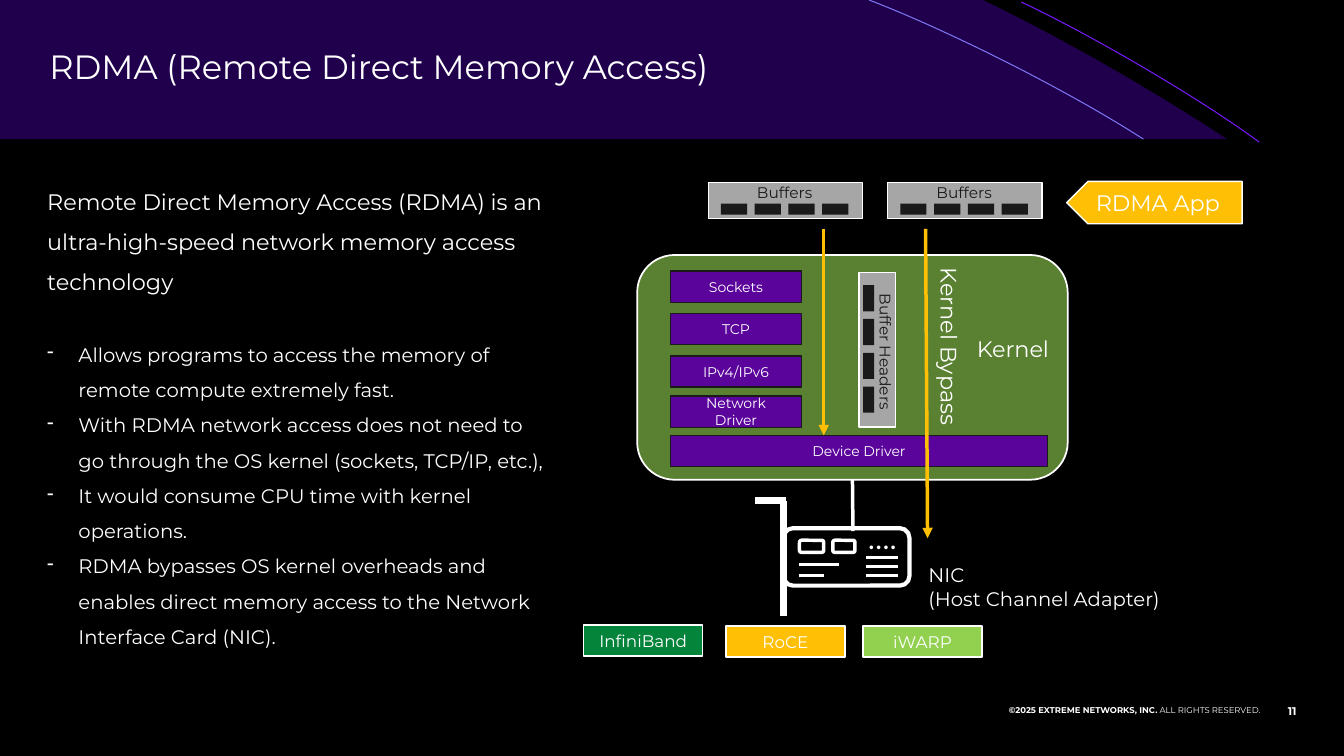
from lxml import etree
from pptx import Presentation
from pptx.dml.color import RGBColor
from pptx.enum import shapes, text
from pptx.oxml.ns import qn
from pptx.util import Inches, Pt

FONT = "Montserrat"
BLACK = RGBColor(0x00, 0x00, 0x00)
WHITE = RGBColor(0xFF, 0xFF, 0xFF)
INK = RGBColor(0x1A, 0x1A, 0x1A)
GREY = RGBColor(0xA6, 0xA6, 0xA6)
NAVY = RGBColor(0x20, 0x00, 0x4C)
VIOLET = RGBColor(0x75, 0x19, 0xF9)
PERIWINKLE = RGBColor(0x7D, 0x76, 0xF2)
PURPLE = RGBColor(0x5B, 0x04, 0x9C)
GREEN = RGBColor(0x04, 0x83, 0x3B)
LIME = RGBColor(0x92, 0xD0, 0x50)
AMBER = RGBColor(0xFE, 0xBF, 0x04)

KIND = shapes.MSO_SHAPE
ALIGN = text.PP_ALIGN
ANCHOR = text.MSO_ANCHOR


def add_span(para, words, size, color=WHITE, bold=False):
    span = para.add_run()
    span.text = words
    font = span.font
    font.name, font.size, font.bold = FONT, Pt(size), bold
    font.color.rgb = color


def write(shape, words, size=10, color=WHITE, align=ALIGN.LEFT, anchor=ANCHOR.TOP,
          wrap=True, inset=None, bold=False):
    """Fill a shape with text, one paragraph a line."""
    frame = shape.text_frame
    frame.word_wrap = wrap
    frame.vertical_anchor = anchor
    if not wrap:
        frame.auto_size = text.MSO_AUTO_SIZE.SHAPE_TO_FIT_TEXT
    if inset is not None:
        frame.margin_left = frame.margin_right = Inches(inset)
        frame.margin_top = frame.margin_bottom = Inches(inset)
    for index, line in enumerate(words.split("\n")):
        para = frame.add_paragraph() if index else frame.paragraphs[0]
        para.alignment = align
        if line:
            add_span(para, line, size, color, bold)
    return frame


def add_label(page, words, left, top, width, height, rotation=0, wrap=False, **style):
    box = page.shapes.add_textbox(Inches(left), Inches(top), Inches(width), Inches(height))
    box.rotation = rotation
    return write(box, words, wrap=wrap, **style)


def paint(shape, fill, line, weight):
    shape.shadow.inherit = False
    if fill is None:
        shape.fill.background()
    else:
        shape.fill.solid()
        shape.fill.fore_color.rgb = fill
    if line is None:
        shape.line.fill.background()
    else:
        shape.line.color.rgb = line
        shape.line.width = Pt(weight)


def add_block(page, left, top, width, height, words="", kind=KIND.RECTANGLE,
              fill=None, line=None, weight=1, rotation=0, size=10):
    block = page.shapes.add_shape(kind, Inches(left), Inches(top), Inches(width), Inches(height))
    block.rotation = rotation
    paint(block, fill, line, weight)
    if words:
        write(block, words, size=size, align=ALIGN.CENTER, anchor=ANCHOR.MIDDLE)
    return block


def add_line(page, x1, y1, x2, y2, color=WHITE, weight=2, arrow=False):
    line = page.shapes.add_connector(shapes.MSO_CONNECTOR.STRAIGHT, Inches(x1), Inches(y1),
                                     Inches(x2), Inches(y2))
    line.line.color.rgb = color
    line.line.width = Pt(weight)
    if arrow:
        etree.SubElement(line.get_or_add_ln(), qn("a:tailEnd"), type="triangle")
    etree.SubElement(line._element.spPr, qn("a:effectLst"))
    return line


def curve(*controls, steps=24):
    """Points along a cubic Bezier curve."""
    points = []
    for step in range(steps + 1):
        t = step / steps
        weights = ((1 - t) ** 3, 3 * t * (1 - t) ** 2, 3 * t * t * (1 - t), t ** 3)
        points.append(tuple(sum(w * c[axis] for w, c in zip(weights, controls))
                            for axis in (0, 1)))
    return points


def add_outline(page, points, fill=None, line=None, close=False):
    spots = [(Inches(x), Inches(y)) for x, y in points]
    builder = page.shapes.build_freeform(*spots[0])
    builder.add_line_segments(spots[1:], close=close)
    paint(builder.convert_to_shape(), fill, line, 0.75)


def add_buffer(page, label, center_x, center_y, label_width, upright=False, label_shift=0):
    """Grey strip with a caption and four memory cells, flat or turned by 90 degrees."""
    rotation = 90 if upright else 0

    def place(along, across, width, height):
        dx, dy = (-across, along) if upright else (along, across)
        return center_x + dx - width / 2, center_y + dy - height / 2, width, height

    add_block(page, *place(0, 0, 1.53, 0.36), fill=GREY, line=WHITE, rotation=rotation)
    for cell in range(4):
        add_block(page, *place(-0.51 + 0.335 * cell, 0.085, 0.26, 0.11),
                  fill=INK, rotation=rotation)
    add_label(page, label, *place(label_shift, -0.08, label_width, 0.29),
              rotation=rotation, size=11, color=INK)


def add_banner(page):
    edge = curve((9.75, 0), (10.59, 0.41), (11.39, 0.87), (12.17, 1.38))
    add_outline(page, [(0, 0), *edge, (0, 1.38)], fill=NAVY, close=True)
    add_outline(page, curve((10.13, 0.02), (10.83, 0.35), (11.91, 0.98), (12.49, 1.41)),
                line=VIOLET)
    add_outline(page, curve((8.62, 0), (9.35, 0.28), (10.53, 0.86), (11.34, 1.38)),
                line=PERIWINKLE)
    add_label(page, "RDMA (Remote Direct Memory Access)", 0.49, 0.44, 11.75, 0.42,
              wrap=True, size=24, anchor=ANCHOR.MIDDLE, inset=0)


def add_footer(page):
    frame = add_label(page, "", 7.5, 7, 5, 0.1, wrap=True, align=ALIGN.RIGHT,
                      anchor=ANCHOR.BOTTOM, inset=0)
    add_span(frame.paragraphs[0], "©2025 EXTREME NETWORKS, INC. ", 6, bold=True)
    add_span(frame.paragraphs[0], "ALL RIGHTS RESERVED.", 6)
    add_label(page, "11", 12.56, 7, 0.3, 0.1, wrap=True, size=8, bold=True,
              align=ALIGN.RIGHT, anchor=ANCHOR.MIDDLE, inset=0)


def add_summary(page):
    frame = add_label(page, "Remote Direct Memory Access (RDMA) is an ultra-high-speed "
                      "network memory access technology", 0.37, 1.68, 5.18, 4.81,
                      wrap=True, size=16)
    frame.paragraphs[0].line_spacing = 1.5
    points = (
        "Allows programs to access the memory of remote compute extremely fast.",
        "With RDMA network access does not need to go through the OS kernel "
        "(sockets, TCP/IP, etc.),",
        "It would consume CPU time with kernel operations.",
        "RDMA bypasses OS kernel overheads and enables direct memory access to the "
        "Network Interface Card (NIC).",
    )
    for index, point in enumerate(points):
        para = frame.add_paragraph()
        props = para._p.get_or_add_pPr()
        props.set("marL", str(Inches(0.31)))
        props.set("indent", str(-Inches(0.31)))
        etree.SubElement(props, qn("a:buChar"), char="-")
        para.line_spacing = 1.5
        para.space_before = Pt(0 if index else 25.5)
        add_span(para, point, 14)


def add_kernel(page):
    kernel = add_block(page, 6.32, 2.53, 4.27, 2.23, kind=KIND.ROUNDED_RECTANGLE,
                       fill=LIME, line=WHITE, weight=1.25)
    tint = kernel._element.spPr.find(qn("a:solidFill"))[0]
    etree.SubElement(tint, qn("a:alpha"), val="62000")
    layers = (("Sockets", 2.69, 1.3), ("TCP", 3.11, 1.3), ("IPv4/IPv6", 3.53, 1.3),
              ("Network\nDriver", 3.93, 1.3), ("Device Driver", 4.32, 3.74))
    for name, top, width in layers:
        add_block(page, 6.65, top, width, 0.31, name, fill=PURPLE, line=INK)
    return kernel


def add_card(page):
    """Network interface card drawn in outline."""
    for left, top, width, height, weight in ((7.77, 5.24, 1.25, 0.57, 3),
                                             (7.93, 5.36, 0.24, 0.12, 2.5),
                                             (8.26, 5.36, 0.22, 0.12, 2.5)):
        add_block(page, left, top, width, height, kind=KIND.ROUNDED_RECTANGLE,
                  line=WHITE, weight=weight)
    add_line(page, 7.77, 4.97, 7.77, 6.11, weight=5)
    add_line(page, 7.49, 4.97, 7.8, 4.97, weight=5)
    for x1, x2, y in ((7.92, 8.32, 5.6), (7.92, 8.17, 5.71), (8.59, 8.91, 5.53),
                      (8.59, 8.91, 5.62), (8.59, 8.91, 5.71)):
        add_line(page, x1, y, x2, y)
    add_label(page, "….", 8.51, 5.07, 0.49, 0.5, size=24)


def main():
    deck = Presentation()
    deck.slide_width, deck.slide_height = Inches(13.33), Inches(7.5)
    page = deck.slides.add_slide(deck.slide_layouts[6])
    page.background.fill.solid()
    page.background.fill.fore_color.rgb = BLACK

    add_banner(page)
    add_footer(page)
    kernel = add_kernel(page)
    add_card(page)

    # Transport protocols
    for name, left, top, fill in (("InfiniBand", 5.79, 6.2, GREEN), ("RoCE", 7.2, 6.21, AMBER),
                                  ("iWARP", 8.56, 6.21, LIME)):
        add_block(page, left, top, 1.18, 0.31, name, fill=fill, line=WHITE, size=12)

    # Data paths
    add_line(page, 8.46, 4.76, 8.46, 5.27, weight=2.5).begin_connect(kernel, 2)
    add_line(page, 8.17, 2.27, 8.17, 4.32, AMBER, 2.5, arrow=True)
    add_line(page, 9.18, 2.27, 9.2, 5.34, AMBER, 2.5, arrow=True)

    # Buffers and labels
    add_buffer(page, "Buffers", 7.79, 1.99, 0.76)
    add_buffer(page, "Buffers", 9.57, 1.99, 0.76)
    add_buffer(page, "Buffer Headers", 8.7, 3.47, 1.37, upright=True, label_shift=0.03)
    add_label(page, "Kernel", 9.59, 3.28, 0.93, 0.37, size=16)
    add_label(page, "Kernel Bypass", 8.52, 3.27, 1.79, 0.37, rotation=90, size=16)
    add_block(page, 10.58, 1.8, 1.74, 0.42, kind=KIND.PENTAGON, fill=AMBER, line=WHITE,
              rotation=180)
    add_label(page, "RDMA App", 10.77, 1.83, 1.45, 0.37, size=16)
    add_label(page, "NIC\n(Host Channel Adapter)", 9.11, 5.54, 2.52, 0.57, size=14)

    add_summary(page)
    deck.save("out.pptx")


if __name__ == "__main__":
    main()
